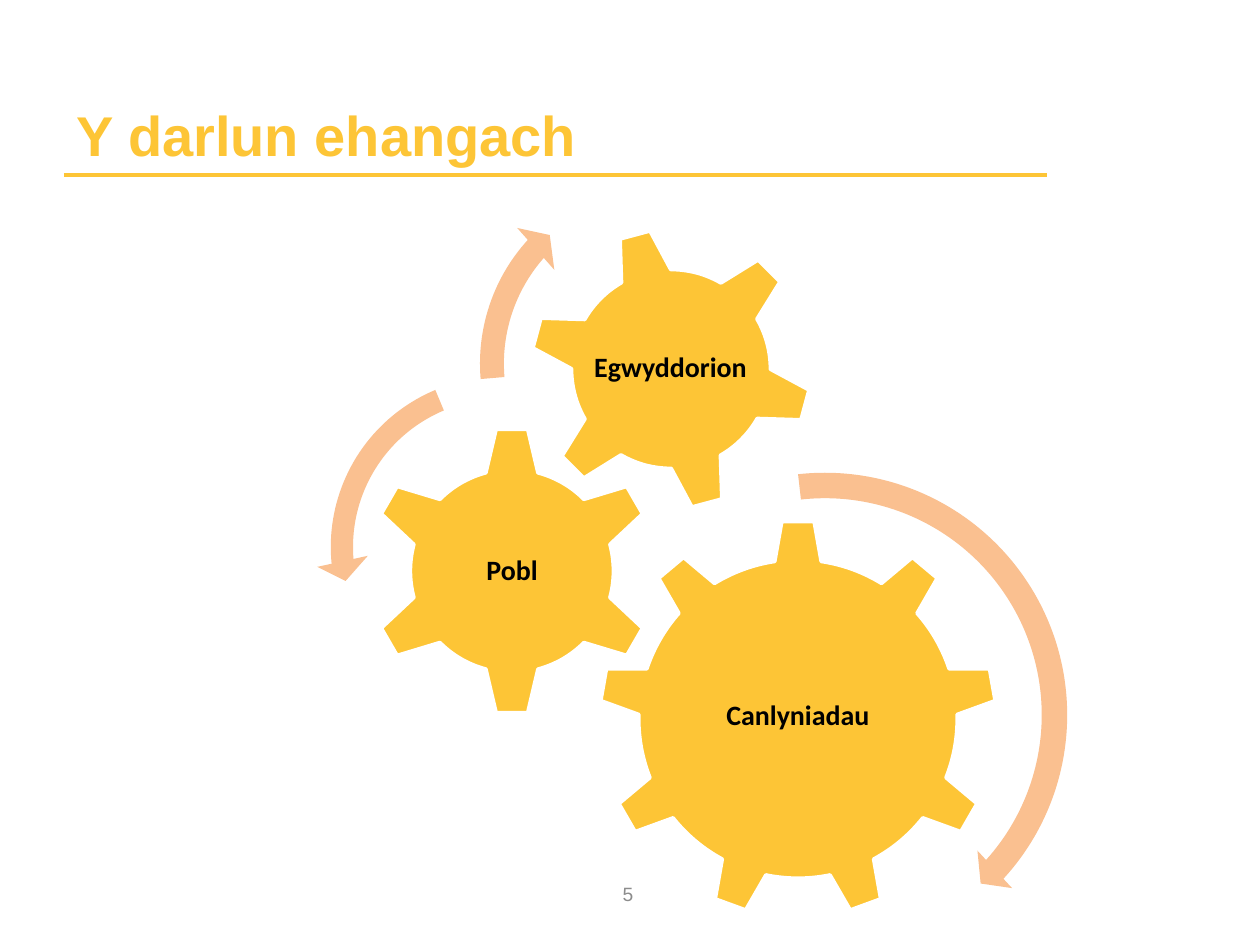
from lxml import etree
from pptx import Presentation
from pptx.dml.color import RGBColor
from pptx.enum.shapes import MSO_CONNECTOR, MSO_SHAPE
from pptx.enum.text import MSO_ANCHOR, PP_ALIGN
from pptx.oxml.ns import qn
from pptx.util import Pt

GEAR_6, GEAR_9 = MSO_SHAPE.GEAR_6, MSO_SHAPE.GEAR_9
ARROW, LEFT_ARROW = MSO_SHAPE.CIRCULAR_ARROW, MSO_SHAPE.LEFT_CIRCULAR_ARROW
STRAIGHT = MSO_CONNECTOR.STRAIGHT
MIDDLE, BOTTOM = MSO_ANCHOR.MIDDLE, MSO_ANCHOR.BOTTOM
LEFT, CENTER = PP_ALIGN.LEFT, PP_ALIGN.CENTER

EMU_PER_PX = 914400 / 126
GOLD, PEACH, WHITE, BLACK, GREY = "FDC536", "FAC090", "FFFFFF", "000000", "8C8C8C"

TITLE = "Y darlun ehangach"
TITLE_BOX = (64, 37, 983, 137)
RULE = (64, 175, 1047, 175)
PAGE = "5"
PAGE_BOX = (481, 869, 294, 50)

GEARS = [
    ("Canlyniadau", GEAR_9, (599, 520, 398, 398), 0, (679, 614, 238, 205)),
    ("Pobl", GEAR_6, (367, 426, 290, 290), 0, (440, 500, 144, 142)),
    ("Egwyddorion", GEAR_6, (529, 227, 284, 284), 345, (591, 289, 159, 159)),
]
ARROWS = [
    (ARROW, (570, 460, 510, 510), (0.05, 2.99, 25.37, 158.18, 0.05)),
    (LEFT_ARROW, (316, 362, 370, 370), (0.06, 4.3, 104.89, 148.38, 0.07)),
    (ARROW, (464, 164, 399, 399), (0.06, 3.94, 133.14, 105.08, 0.07)),
]


def px(*lengths):
    return [round(length * EMU_PER_PX) for length in lengths]


def color(code):
    return RGBColor.from_string(code)


def add_preset(slide, preset, box, fill):
    shape = slide.shapes.add_shape(preset, *px(*box))
    shape.shadow.inherit = False
    shape.fill.solid()
    shape.fill.fore_color.rgb = color(fill)
    shape.line.fill.background()
    return shape


def add_label(slide, text, box, size, font, ink, bold, align=CENTER,
              anchor=MIDDLE, inset=None, spacing=None):
    frame = slide.shapes.add_textbox(*px(*box)).text_frame
    frame.word_wrap = True
    frame.vertical_anchor = anchor
    if inset is not None:
        margin = px(inset)[0]
        frame.margin_left = frame.margin_right = margin
        frame.margin_top = frame.margin_bottom = margin
    paragraph = frame.paragraphs[0]
    paragraph.alignment = align
    paragraph.line_spacing = spacing
    run = paragraph.add_run()
    run.text = text
    run.font.size = Pt(size)
    run.font.name = font
    run.font.bold = bold
    run.font.color.rgb = color(ink)


def add_rule(slide, ends):
    rule = slide.shapes.add_connector(STRAIGHT, *px(*ends))
    rule.line.color.rgb = color(GOLD)
    rule.line.width = Pt(2)
    etree.SubElement(rule._element.spPr, qn("a:effectLst"))


def main():
    deck = Presentation()
    deck.slide_width, deck.slide_height = px(1260, 945)
    slide = deck.slides.add_slide(deck.slide_layouts[6])

    add_rule(slide, RULE)
    add_label(slide, TITLE, TITLE_BOX, 32, "Arial", GOLD, True, LEFT, BOTTOM)

    for name, preset, box, turn, name_box in GEARS:
        gear = add_preset(slide, preset, box, GOLD)
        gear.rotation = turn
        gear.line.color.rgb = color(WHITE)
        gear.line.width = Pt(2)
        add_label(slide, name, name_box, 16, "Calibri", BLACK, True,
                  inset=2, spacing=0.9)

    for preset, box, bends in ARROWS:
        arrow = add_preset(slide, preset, box, PEACH)
        for index, bend in enumerate(bends):
            arrow.adjustments[index] = bend

    add_label(slide, PAGE, PAGE_BOX, 11, "Arial", GREY, False)
    deck.save("out.pptx")


if __name__ == "__main__":
    main()
